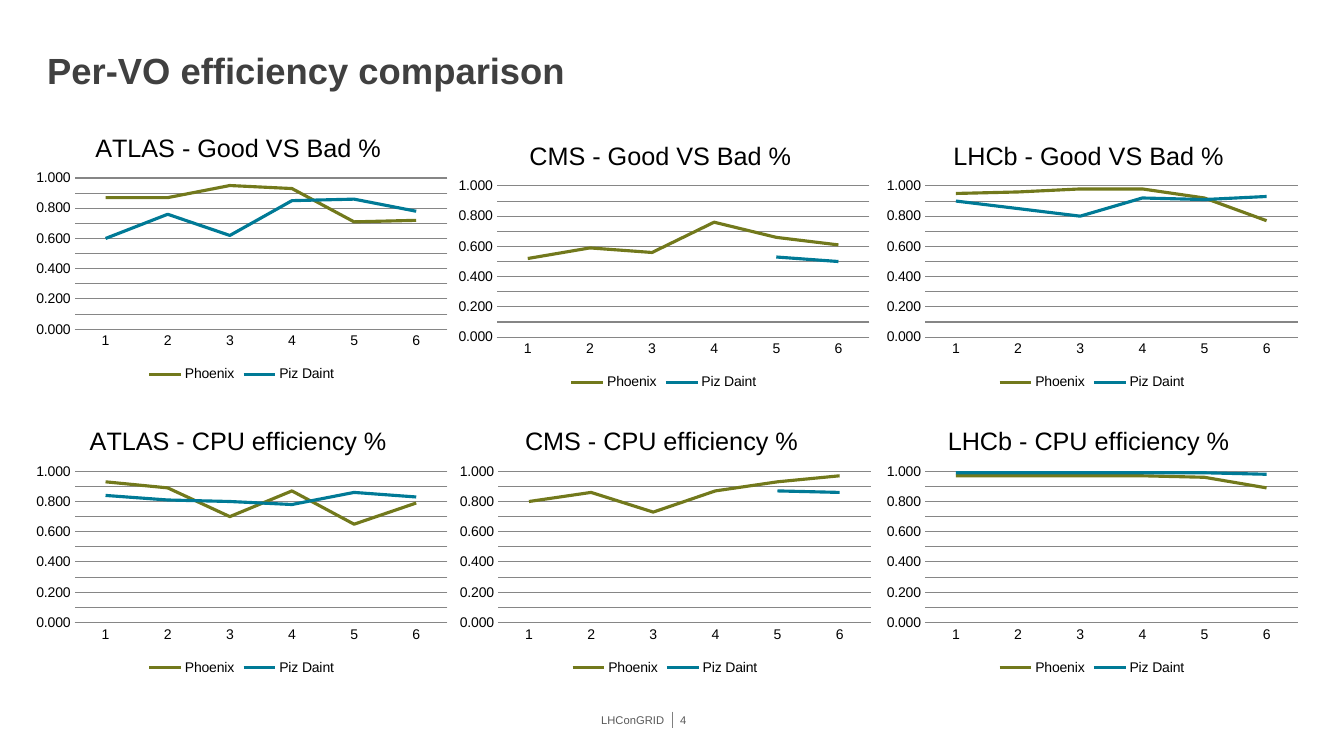
"""Build a slide comparing per-VO efficiency on two clusters with six line charts."""
import pptx
import pptx.chart.data
import pptx.dml.color
import pptx.enum.chart
import pptx.enum.shapes
import pptx.enum.text
import pptx.util
from lxml import etree
from pptx.util import Cm, Pt

TITLE = "Per-VO efficiency comparison"
FOOTER = "LHConGRID"
PAGE_NUMBER = "4"
CLUSTERS = {"Phoenix": "olive", "Piz Daint": "teal"}
MONTHS = ["1", "2", "3", "4", "5", "6"]
CHARTS = [
    ("CMS - Good VS Bad % ", 11.33, 3.12,
     [0.52, 0.59, 0.56, 0.76, 0.66, 0.61], [None, None, None, None, 0.53, 0.5]),
    ("CMS - CPU efficiency % ", 11.36, 10.31,
     [0.8, 0.86, 0.73, 0.87, 0.93, 0.97], [None, None, None, None, 0.87, 0.86]),
    ("LHCb - CPU efficiency % ", 22.12, 10.31,
     [0.97, 0.97, 0.97, 0.97, 0.96, 0.89], [0.99, 0.99, 0.99, 0.99, 0.99, 0.98]),
    ("LHCb - Good VS Bad % ", 22.12, 3.12,
     [0.95, 0.96, 0.98, 0.98, 0.92, 0.77], [0.9, 0.85, 0.8, 0.92, 0.91, 0.93]),
    ("ATLAS - Good VS Bad % ", 0.69, 2.92,
     [0.87, 0.87, 0.95, 0.93, 0.71, 0.72], [0.6, 0.76, 0.62, 0.85, 0.86, 0.78]),
    ("ATLAS - CPU efficiency % ", 0.69, 10.31,
     [0.93, 0.89, 0.7, 0.87, 0.65, 0.79], [0.84, 0.81, 0.8, 0.78, 0.86, 0.83]),
]
CHART_WIDTH, CHART_HEIGHT = 10.8, 6.81
PLOT_LAYOUT = {"x": 0.11, "y": 0.23, "w": 0.87, "h": 0.56}
FOOTER_TOP, FOOTER_HEIGHT, DIVIDER_LEFT = 17.93, 0.41, 16.94
COLORS = {"olive": "72791C", "teal": "007A96", "black": "000000", "title": "404040",
          "footer": "595959", "divider": "808080", "grid": "868686"}
FONT = "Arial"


def color(name):
    return pptx.dml.color.RGBColor.from_string(COLORS[name])


def style_font(font, size, name, bold=False):
    font.name, font.size, font.bold = FONT, Pt(size), bold
    font.color.rgb = color(name)


def style_line(line, name, width):
    line.color.rgb = color(name)
    line.width = Pt(width)


def add_text(page, text, place, margins, size, name, anchor, align, bold=False):
    box = page.shapes.add_textbox(*map(Cm, place))
    frame = box.text_frame
    frame.word_wrap = True
    frame.vertical_anchor = anchor
    frame.margin_left, frame.margin_top, frame.margin_right, frame.margin_bottom = map(Cm, margins)
    para = frame.paragraphs[0]
    para.text = text
    para.alignment = align
    style_font(para.font, size, name, bold)


def fix_plot_area(chart):
    plot_area = chart.plots[0]._element.getparent()
    namespace = etree.QName(plot_area).namespace
    for layout in plot_area.findall(f"{{{namespace}}}layout"):
        plot_area.remove(layout)
    layout = etree.Element(f"{{{namespace}}}layout")
    manual = etree.SubElement(layout, f"{{{namespace}}}manualLayout")
    settings = {"layoutTarget": "inner", "xMode": "edge", "yMode": "edge", **PLOT_LAYOUT}
    for tag, value in settings.items():
        etree.SubElement(manual, f"{{{namespace}}}{tag}").set("val", str(value))
    plot_area.insert(0, layout)


def add_efficiency_chart(page, title, left, top, *values):
    chart_data = pptx.chart.data.CategoryChartData(number_format="0.000")
    chart_data.categories = MONTHS
    for cluster, shares in zip(CLUSTERS, values):
        chart_data.add_series(cluster, shares)
    chart = page.shapes.add_chart(
        pptx.enum.chart.XL_CHART_TYPE.LINE, Cm(left), Cm(top),
        Cm(CHART_WIDTH), Cm(CHART_HEIGHT), chart_data).chart
    style_font(chart.font, 10, "black")

    chart.has_title = True
    heading = chart.chart_title.text_frame.paragraphs[0]
    heading.text = title
    style_font(heading.font, 18, "black")
    chart.chart_title.include_in_layout = False

    chart.has_legend = True
    chart.legend.position = pptx.enum.chart.XL_LEGEND_POSITION.BOTTOM
    chart.legend.include_in_layout = False

    for axis in (chart.category_axis, chart.value_axis):
        axis.major_tick_mark = axis.minor_tick_mark = pptx.enum.chart.XL_TICK_MARK.NONE
    style_line(chart.category_axis.format.line, "grid", 0.75)
    scale = chart.value_axis
    scale.minimum_scale, scale.maximum_scale, scale.major_unit = 0, 1, 0.1
    scale.has_major_gridlines = True
    style_line(scale.major_gridlines.format.line, "grid", 0.75)
    scale.format.line.fill.background()
    scale.tick_labels.number_format = "0.000"
    scale.tick_labels.number_format_is_linked = False

    chart.plots[0].vary_by_categories = False
    for series, name in zip(chart.plots[0].series, CLUSTERS.values()):
        series.smooth = False
        style_line(series.format.line, name, 2.25)
    fix_plot_area(chart)


def main():
    deck = pptx.Presentation()
    deck.slide_width, deck.slide_height = Cm(33.87), Cm(19.05)
    page = deck.slides.add_slide(deck.slide_layouts[6])
    anchors, aligns = pptx.enum.text.MSO_ANCHOR, pptx.enum.text.PP_ALIGN

    divider = page.shapes.add_connector(
        pptx.enum.shapes.MSO_CONNECTOR.STRAIGHT, Cm(DIVIDER_LEFT), Cm(FOOTER_TOP),
        Cm(DIVIDER_LEFT), Cm(FOOTER_TOP + FOOTER_HEIGHT))
    style_line(divider.line, "divider", 0.75)
    etree.SubElement(divider._element.spPr, pptx.oxml.ns.qn("a:effectLst"))

    for entry in CHARTS:
        add_efficiency_chart(page, *entry)

    add_text(page, TITLE, (1.19, 0.13, 31.47, 2.39), (0, 0, 0, 0.2), 26, "title",
             anchors.BOTTOM, aligns.LEFT, True)
    add_text(page, FOOTER, (DIVIDER_LEFT - 11.43, FOOTER_TOP, 11.43, FOOTER_HEIGHT),
             (0, 0, 0.2, 0), 8, "footer", anchors.MIDDLE, aligns.RIGHT)
    add_text(page, PAGE_NUMBER, (DIVIDER_LEFT, FOOTER_TOP, 1.07, FOOTER_HEIGHT),
             (0.2, 0, 0, 0), 8, "footer", anchors.MIDDLE, aligns.LEFT)
    deck.save("out.pptx")


if __name__ == "__main__":
    main()
